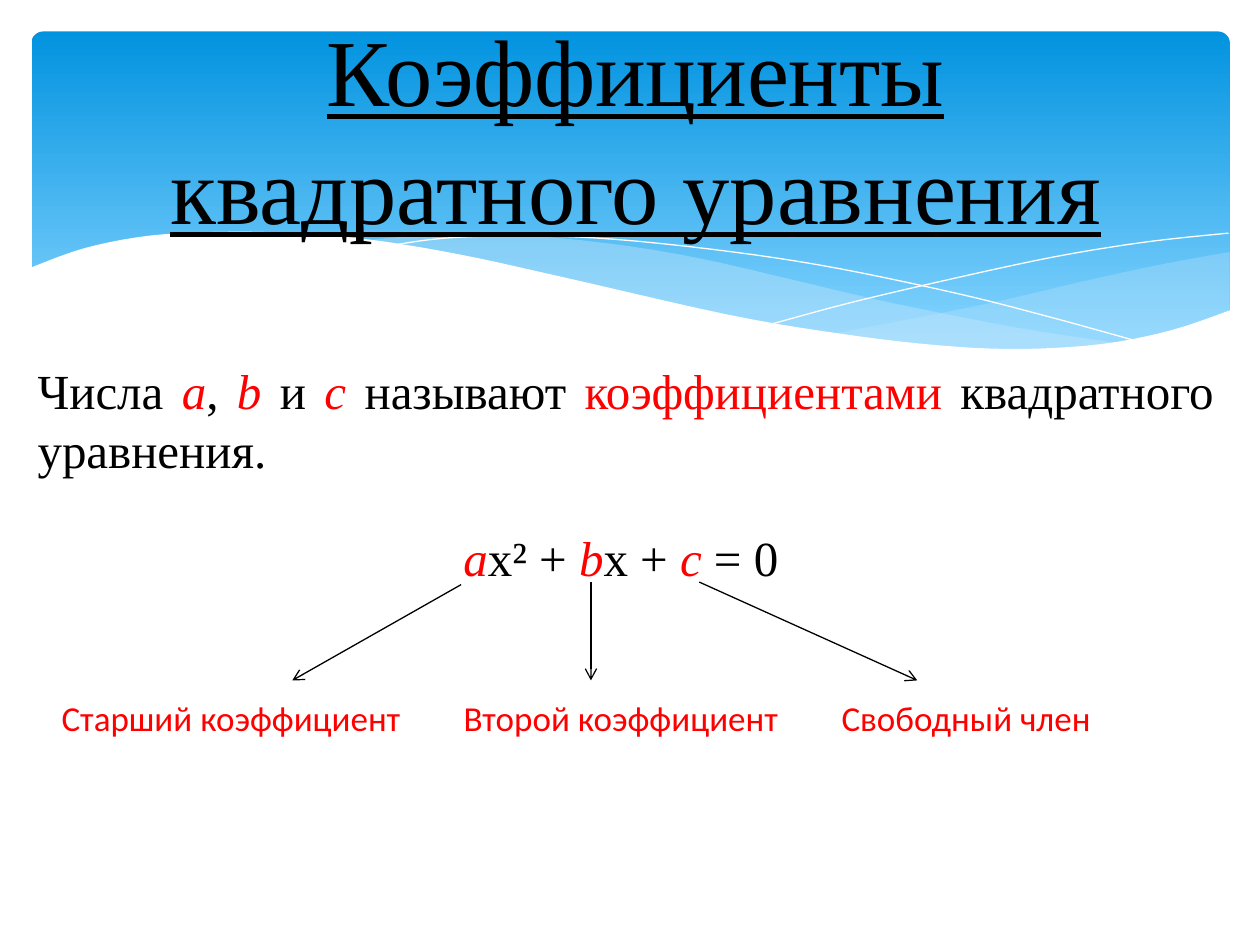
"""Build a slide naming the coefficients of a quadratic equation."""
import pptx
import pptx.dml.color
import pptx.enum.shapes
import pptx.enum.text
import pptx.oxml
import pptx.oxml.ns
import pptx.util
from pptx.util import Inches

THEME = {
    "serif": "Times New Roman", "sans": "Calibri",
    "text": "000000", "accent": "FF0000", "paper": "FFFFFF",
    "sky_top": "0293E0", "sky_bottom": "83D3FE", "mist": "C6E7FC",
    "title_size": 54, "body_size": 28, "label_size": 20,
}
TITLE = "Коэффициенты\vквадратного уравнения"
DEFINITION = [
    ("Числа ", "plain"), ("а", "symbol"), (", ", "plain"), ("b", "symbol"),
    (" и ", "plain"), ("с", "symbol"), (" называют ", "plain"),
    ("коэффициентами ", "term"), ("квадратного уравнения.", "plain"),
]
EQUATION = [
    ("а", "symbol"), ("х² + ", "plain"), ("b", "symbol"),
    ("x + ", "plain"), ("c", "symbol"), (" = 0", "plain"),
]
LABELS = ["Старший коэффициент", "Второй коэффициент", "Свободный член"]
LABEL_TABS = [3.19, 6.19]
ARROWS = [
    ((3.66, 4.64), (2.32, 5.4)),
    ((4.69, 4.62), (4.69, 5.4)),
    ((5.55, 4.62), (7.28, 5.4)),
]
MISTS = [
    (29, [
        [(9.76, 2), (9.21, 2.1), (8.61, 2.23), (7.79, 2.42), (6.61, 2.65)],
        [(6.61, 2.65), (7.19, 2.72), (7.69, 2.77), (8.24, 2.77),
         (8.81, 2.73), (9.35, 2.62), (9.76, 2.47)],
    ]),
    (40, [
        [(8.93, 2.73), (8.07, 2.6), (7.06, 2.4), (6.29, 2.22), (5.55, 2.05),
         (4.89, 1.94), (4.2, 1.87), (3.61, 1.85), (2.86, 1.91)],
        [(2.86, 1.91), (3.62, 2.03), (4.49, 2.22), (5.3, 2.4), (6.18, 2.58),
         (6.95, 2.7), (7.61, 2.77), (8.28, 2.78), (8.93, 2.73)],
    ]),
]
STRANDS = [
    [(3.09, 1.95), (3.53, 1.89), (4.16, 1.87), (4.89, 1.9), (5.82, 2),
     (6.65, 2.13), (7.6, 2.33), (8.31, 2.51), (9.07, 2.72)],
    [(6.13, 2.57), (6.72, 2.41), (7.48, 2.23), (8.36, 2.04), (9.1, 1.92), (9.75, 1.85)],
]
WAVE = [
    [(9.77, 2.46), (9.3, 2.62), (8.75, 2.73), (8.09, 2.77), (7.44, 2.74),
     (6.68, 2.65), (5.79, 2.5), (4.47, 2.2), (3.65, 2.02), (2.92, 1.9),
     (2.3, 1.85), (1.77, 1.84), (1.19, 1.87), (0.67, 1.97), (0.23, 2.13)],
    [(0.23, 3.29), (9.77, 3.29)],
]


def color(name):
    return pptx.dml.color.RGBColor.from_string(THEME[name])


def smooth(knots, steps=5):
    """Return a Catmull-Rom curve through the knots."""
    padded = [knots[0], *knots, knots[-1]]
    points = [knots[0]]
    for a, b, c, d in zip(padded, padded[1:], padded[2:], padded[3:]):
        for step in range(1, steps + 1):
            t = step / steps
            points.append(tuple(
                (2 * q + (r - p) * t + (2 * p - 5 * q + 4 * r - s) * t ** 2
                 + (3 * q - p - 3 * r + s) * t ** 3) / 2
                for p, q, r, s in zip(a, b, c, d)))
    return points


def add_outline(slide, edges, closed=True):
    points = [(Inches(x), Inches(y)) for edge in edges for x, y in smooth(edge)]
    builder = slide.shapes.build_freeform(*points[0], scale=1.0)
    builder.add_line_segments(points[1:], close=closed)
    shape = builder.convert_to_shape()
    shape.shadow.inherit = False
    return shape


def fill_outline(shape, name, opacity=100):
    shape.line.fill.background()
    shape.fill.solid()
    shape.fill.fore_color.rgb = color(name)
    if opacity < 100:
        rgb = shape.fill._xPr.find(".//" + pptx.oxml.ns.qn("a:srgbClr"))
        alpha = pptx.oxml.parse_xml(
            f'<a:alpha {pptx.oxml.ns.nsdecls("a")} val="{opacity * 1000}"/>')
        rgb.append(alpha)


def add_banner(slide):
    banner = slide.shapes.add_shape(
        pptx.enum.shapes.MSO_SHAPE.ROUNDED_RECTANGLE,
        Inches(0.25), Inches(0.25), Inches(9.51), Inches(2.7))
    banner.adjustments[0] = 0.034
    banner.shadow.inherit = False
    banner.line.fill.background()
    banner.fill.gradient()
    banner.fill.gradient_angle = 270
    stops = zip(banner.fill.gradient_stops, (("sky_top", 0), ("sky_bottom", 0.9)))
    for stop, (name, position) in stops:
        stop.color.rgb = color(name)
        stop.position = position
    for opacity, edges in MISTS:
        fill_outline(add_outline(slide, edges), "mist", opacity)
    for strand in STRANDS:
        shape = add_outline(slide, [strand], closed=False)
        shape.fill.background()
        shape.line.color.rgb = color("paper")
        shape.line.width = pptx.util.Pt(0)
    fill_outline(add_outline(slide, WAVE), "paper")


def add_text(slide, box, align="LEFT", wrap=True):
    frame = slide.shapes.add_textbox(*map(Inches, box)).text_frame
    frame.word_wrap = wrap
    paragraph = frame.paragraphs[0]
    paragraph.alignment = getattr(pptx.enum.text.PP_ALIGN, align)
    return frame, paragraph


def style(run, family, size, name):
    run.font.name = THEME[family]
    run.font.size = pptx.util.Pt(THEME[size])
    run.font.color.rgb = color(name)


def add_formula_runs(paragraph, pieces):
    for text, role in pieces:
        run = paragraph.add_run()
        run.text = text
        style(run, "serif", "body_size", "text" if role == "plain" else "accent")
        run.font.italic = role == "symbol"


def add_arrow(slide, start, end):
    arrow = slide.shapes.add_connector(
        pptx.enum.shapes.MSO_CONNECTOR.STRAIGHT, *map(Inches, start + end))
    arrow.line.color.rgb = color("text")
    arrow.line.width = pptx.util.Pt(0.75)
    namespace = pptx.oxml.ns.nsdecls("a")
    arrow.line._get_or_add_ln().append(
        pptx.oxml.parse_xml(f'<a:tailEnd {namespace} type="arrow"/>'))
    arrow._element.spPr.append(pptx.oxml.parse_xml(f"<a:effectLst {namespace}/>"))


def add_labels(slide):
    paragraph = add_text(slide, (0.39, 5.48, 9.61, 0.44))[1]
    paragraph.text = "\t".join(LABELS)
    for run in paragraph.runs:
        style(run, "sans", "label_size", "accent")
    tabs = "".join(f'<a:tab pos="{Inches(tab)}" algn="l"/>' for tab in LABEL_TABS)
    paragraph._p.get_or_add_pPr().append(pptx.oxml.parse_xml(
        f'<a:tabLst {pptx.oxml.ns.nsdecls("a")}>{tabs}</a:tabLst>'))


def main():
    presentation = pptx.Presentation()
    presentation.slide_width, presentation.slide_height = Inches(10), Inches(7.5)
    slide = presentation.slides.add_slide(presentation.slide_layouts[6])
    add_banner(slide)
    frame, paragraph = add_text(slide, (0.59, 0.13, 8.91, 1.73), "CENTER")
    frame.vertical_anchor = pptx.enum.text.MSO_ANCHOR.MIDDLE
    paragraph.text = TITLE
    paragraph.line_spacing = 1.04
    for run in paragraph.runs:
        style(run, "serif", "title_size", "text")
        run.font.underline = True
    add_formula_runs(add_text(slide, (0.2, 2.81, 9.53, 1.04), "JUSTIFY")[1], DEFINITION)
    add_formula_runs(add_text(slide, (3.58, 4.14, 2.7, 0.57), wrap=False)[1], EQUATION)
    for start, end in ARROWS:
        add_arrow(slide, start, end)
    add_labels(slide)
    presentation.save("out.pptx")


if __name__ == "__main__":
    main()
